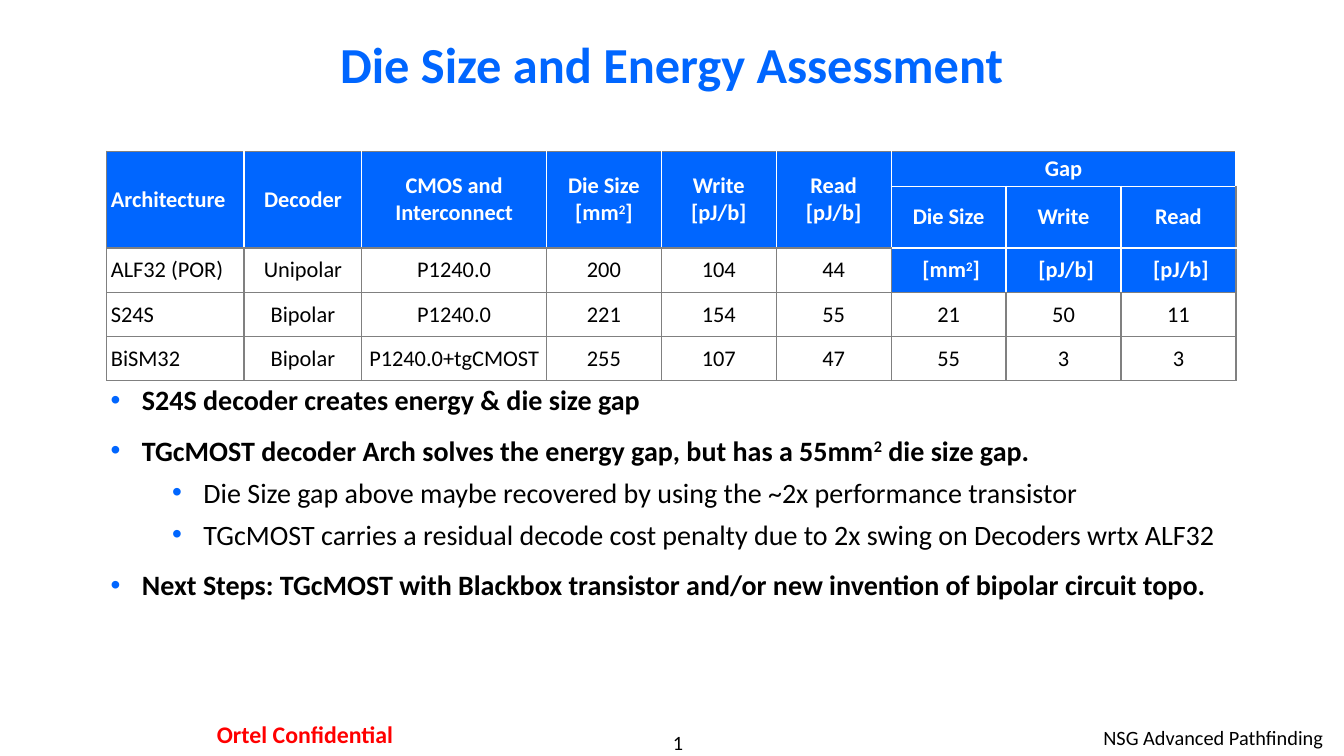
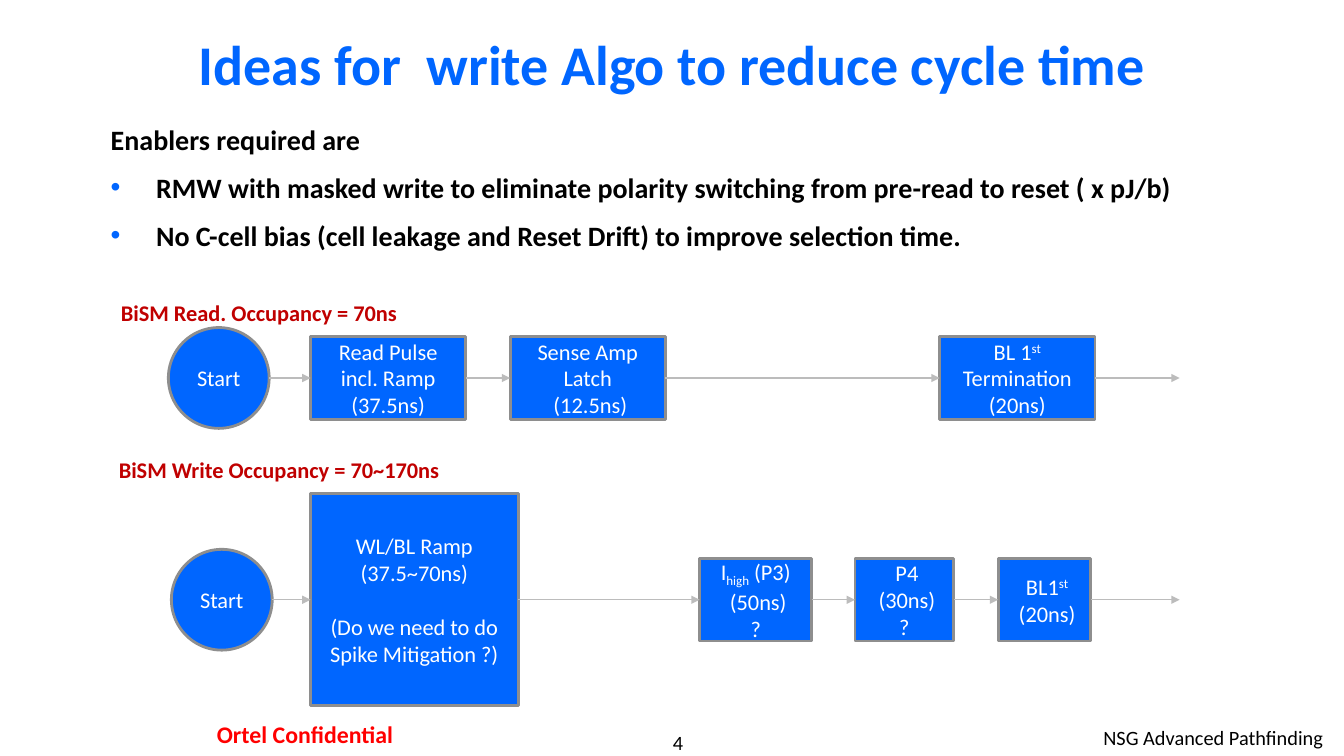
from lxml import etree
from pptx import Presentation
from pptx.dml.color import RGBColor
from pptx.enum import shapes, text
from pptx.oxml import ns
from pptx.util import Inches, Pt

WIDTH, HEIGHT = 13.33, 7.5
FONT = "Calibri"
COLOURS = {
    "blue": "0066FF", "black": "000000", "white": "FFFFFF", "red": "FF0000",
    "label": "C00000", "grid": "808080", "outline": "8E8E8E", "arrow": "BCBCBC",
}
LEFT, CENTER, RIGHT = text.PP_ALIGN.LEFT, text.PP_ALIGN.CENTER, text.PP_ALIGN.RIGHT

# In all texts "|" parts the spans; a span led by "^" is raised, by "_" lowered.
ASSESSMENT = {
    "title": "Die Size and Energy Assessment", "title_size": 36, "number": "1",
    "body_at": (1, 3.75, 11.27, 2.92),
    # text, bold, left margin, hanging indent, space before
    "body": [
        ("S24S decoder creates energy & die size gap", True, 0.31, 0.31, 12),
        ("TGcMOST decoder Arch solves the energy gap, but has a 55mm|^2| die size gap.",
         True, 0.31, 0.31, 12),
        ("Die Size gap above maybe recovered by using the ~2x performance transistor",
         False, 0.92, 0.31, 6),
        ("TGcMOST carries a residual decode cost penalty due to 2x swing on Decoders wrtx ALF32",
         False, 0.92, 0.31, 6),
        ("Next Steps: TGcMOST with Blackbox transistor and/or new invention of bipolar circuit topo.",
         True, 0.31, 0.31, 12),
    ],
}
COLUMNS = [1.36, 1.17, 1.83] + [1.14] * 6
ROWS = [0.34, 0.61] + [0.44] * 3
GAP_COLUMN, HEADER_ROWS = 6, 2
CELLS = [
    ["Architecture", "Decoder", "CMOS and Interconnect", "Die Size\n[mm|^2|]",
     "Write\n[pJ/b]", "Read\n[pJ/b]", "Gap", "", ""],
    ["", "", "", "", "", "", "Die Size", "Write", "Read"],
    ["ALF32 (POR)", "Unipolar", "P1240.0", "200", "104", "44",
     " [mm|^2|]", " [pJ/b]", " [pJ/b]"],
    ["S24S", "Bipolar", "P1240.0", "221", "154", "55", "21", "50", "11"],
    ["BiSM32", "Bipolar", "P1240.0+tgCMOST", "255", "107", "47", "55", "3", "3"],
]

IDEAS = {
    "title": "Ideas for  write Algo to reduce cycle time", "title_size": 40, "number": "4",
    "body_at": (1, 1.17, 11.33, 1.49),
    "body": [
        ("Enablers required are", True, 0, 0, 10),
        ("RMW with masked write to eliminate polarity switching from pre-read to reset ( x pJ/b)",
         True, 0.45, 0.45, 10),
        ("No C-cell bias (cell leakage and Reset Drift) to improve selection time.",
         True, 0.45, 0.45, 10),
    ],
}
STEP_HEIGHT, START_SIZE, FLOW_END = 0.82, 1, 11.7
FLOWS = [
    {"label": "BiSM Read. Occupancy = 70ns", "label_at": (1.1, 2.92, 2.98, 0.37),
     "middle": 3.75, "start": 1.67,
     # left, width, height, lines
     "steps": [
         (3.08, 1.54, STEP_HEIGHT, ["Read Pulse incl. Ramp", "(37.5ns)"]),
         (5.06, 1.54, STEP_HEIGHT, ["Sense Amp Latch", " (12.5ns)"]),
         (9.32, 1.54, STEP_HEIGHT, ["BL 1|^st| Termination (20ns)"]),
     ]},
    {"label": "BiSM Write Occupancy = 70~170ns", "label_at": (1.08, 4.48, 3.43, 0.37),
     "middle": 5.95, "start": 1.7,
     "steps": [
         (3.08, 2.06, 2.1, ["WL/BL Ramp", "(37.5~70ns)",
                            "(Do we need to do\vSpike Mitigation ?)"]),
         (6.94, 1.11, STEP_HEIGHT, ["I|_high| (P3)", " (50ns)", "?"]),
         (8.48, 0.98, STEP_HEIGHT, [" P4", " (30ns)", "?"]),
         (9.9, 0.92, STEP_HEIGHT, [" BL1|^st", " (20ns)"]),
     ]},
]
BLANK_LINE = 19.5


def rgb(name):
    return RGBColor.from_string(COLOURS[name])


def inches(values):
    return [Inches(value) for value in values]


def write(para, content, size, colour, bold=False, align=LEFT):
    """Fill a paragraph with its plain, raised and lowered spans."""
    para.alignment = align
    para.font.name, para.font.size, para.font.bold = FONT, Pt(size), bold
    para.font.color.rgb = rgb(colour)
    for part in content.split("|"):
        shift = {"^": "30000", "_": "-25000"}.get(part[:1])
        for index, line in enumerate((part[1:] if shift else part).split("\v")):
            if index:
                para.add_line_break()
            span = para.add_run()
            span.text = line
            if shift:
                span._r.get_or_add_rPr().set("baseline", shift)


def paragraphs(frame, lines):
    """Pair each line with its paragraph, adding paragraphs as needed."""
    for index, line in enumerate(lines):
        yield (frame.add_paragraph() if index else frame.paragraphs[0]), line


def add_text(page, at, content, size, colour, bold=False, align=LEFT,
             wrap=True, anchor=text.MSO_ANCHOR.TOP, insets=(0.1, 0.05)):
    frame = page.shapes.add_textbox(*inches(at)).text_frame
    frame.word_wrap, frame.vertical_anchor = wrap, anchor
    frame.margin_left = frame.margin_right = Inches(insets[0])
    frame.margin_top = frame.margin_bottom = Inches(insets[1])
    write(frame.paragraphs[0], content, size, colour, bold, align)


def add_bullet(para, margin, hanging):
    props = para._p.get_or_add_pPr()
    props.set("marL", str(Inches(margin)))
    props.set("indent", str(-Inches(hanging)))
    colour = etree.SubElement(props, ns.qn("a:buClr"))
    etree.SubElement(colour, ns.qn("a:srgbClr"), val=COLOURS["blue"])
    etree.SubElement(props, ns.qn("a:buFont"), typeface="Arial")
    etree.SubElement(props, ns.qn("a:buChar"), char="•")


def add_page(deck, content):
    """Add a slide with title, bullets and footer."""
    page = deck.slides.add_slide(deck.slide_layouts[6])
    add_text(page, (5.56, 7.24, 2.33, 0.24), content["number"], 14.5, "black",
             align=CENTER, insets=(0, 0))
    add_text(page, (8.83, 7.15, 4.39, 0.35), "NSG Advanced Pathfinding", 14.5, "black",
             align=RIGHT)
    add_text(page, (1.55, 7.08, 2.95, 0.41), "Ortel Confidential", 17, "red", True, CENTER,
             insets=(0.12, 0.06))
    add_text(page, (1, 0.17, 11.33, 0.92), content["title"], content["title_size"], "blue",
             True, CENTER, anchor=text.MSO_ANCHOR.MIDDLE)

    frame = page.shapes.add_textbox(*inches(content["body_at"])).text_frame
    frame.word_wrap = True
    for para, (line, bold, margin, hanging, gap) in paragraphs(frame, content["body"]):
        if hanging:
            add_bullet(para, margin, hanging)
        if para._p is not frame.paragraphs[0]._p:
            para.space_before = Pt(gap)
        write(para, line, 20, "black", bold)
    return page


def is_filled(row, column):
    return row < HEADER_ROWS or (row == HEADER_ROWS and column >= GAP_COLUMN)


def add_borders(cell, row, column):
    """White between two filled cells, grey elsewhere."""
    sides = [("L", 0, -1), ("R", 0, 1), ("T", -1, 0), ("B", 1, 0)]
    props = cell._tc.get_or_add_tcPr()
    for index, (side, down, across) in enumerate(sides):
        y, x = row + down, column + across
        inside = 0 <= y < len(ROWS) and 0 <= x < len(COLUMNS)
        white = inside and is_filled(row, column) and is_filled(y, x)
        line = etree.Element(ns.qn("a:ln" + side), w=str(Pt(1)))
        fill = etree.SubElement(line, ns.qn("a:solidFill"))
        etree.SubElement(fill, ns.qn("a:srgbClr"), val=COLOURS["white" if white else "grid"])
        props.insert(index, line)


def add_assessment_table(page):
    frame = page.shapes.add_table(len(ROWS), len(COLUMNS),
                                  *inches((1.06, 1.5, sum(COLUMNS), sum(ROWS))))
    table = frame.table
    table.first_row = table.horz_banding = False
    for column, width in zip(table.columns, COLUMNS):
        column.width = Inches(width)
    for row, height in zip(table.rows, ROWS):
        row.height = Inches(height)
    for y, line in enumerate(CELLS):
        for x, content in enumerate(line):
            cell, filled = table.cell(y, x), is_filled(y, x)
            cell.margin_left = cell.margin_right = Inches(0.04)
            cell.margin_top = cell.margin_bottom = Inches(0.04)
            cell.vertical_anchor = text.MSO_ANCHOR.MIDDLE
            if filled:
                cell.fill.solid()
                cell.fill.fore_color.rgb = rgb("blue")
            else:
                cell.fill.background()
            add_borders(cell, y, x)
            for para, words in paragraphs(cell.text_frame, content.split("\n")):
                write(para, words, 16, "white" if filled else "black", filled,
                      CENTER if x else LEFT)
    for x in range(GAP_COLUMN):
        table.cell(0, x).merge(table.cell(HEADER_ROWS - 1, x))
    table.cell(0, GAP_COLUMN).merge(table.cell(0, len(COLUMNS) - 1))


def add_step(page, kind, left, middle, width, height, lines):
    box = page.shapes.add_shape(kind, *inches((left, middle - height / 2, width, height)))
    box.shadow.inherit = False
    box.fill.solid()
    box.fill.fore_color.rgb = rgb("blue")
    box.line.color.rgb, box.line.width = rgb("outline"), Pt(2)
    frame = box.text_frame
    frame.word_wrap, frame.vertical_anchor = True, text.MSO_ANCHOR.MIDDLE
    for para, line in paragraphs(frame, lines):
        if "\v" in line:
            para.space_before = Pt(BLANK_LINE)
        write(para, line, 16, "white", align=CENTER)


def add_arrow(page, start, end, middle):
    arrow = page.shapes.add_connector(shapes.MSO_CONNECTOR.STRAIGHT,
                                      *inches((start, middle, end, middle)))
    arrow.line.color.rgb, arrow.line.width = rgb("arrow"), Pt(0.75)
    etree.SubElement(arrow.line._get_or_add_ln(), ns.qn("a:tailEnd"), type="triangle")
    etree.SubElement(arrow._element.spPr, ns.qn("a:effectLst"))


def add_flow(page, flow):
    add_text(page, flow["label_at"], flow["label"], 16, "label", True, wrap=False)
    middle, start = flow["middle"], flow["start"]
    add_step(page, shapes.MSO_SHAPE.OVAL, start, middle, START_SIZE, START_SIZE, ["Start"])
    edge = start + START_SIZE
    for left, width, height, lines in flow["steps"]:
        add_step(page, shapes.MSO_SHAPE.RECTANGLE, left, middle, width, height, lines)
        add_arrow(page, edge, left, middle)
        edge = left + width
    add_arrow(page, edge, FLOW_END, middle)


def main():
    deck = Presentation()
    deck.slide_width, deck.slide_height = inches((WIDTH, HEIGHT))
    add_assessment_table(add_page(deck, ASSESSMENT))
    ideas = add_page(deck, IDEAS)
    for flow in FLOWS:
        add_flow(ideas, flow)
    deck.save("out.pptx")


if __name__ == "__main__":
    main()
